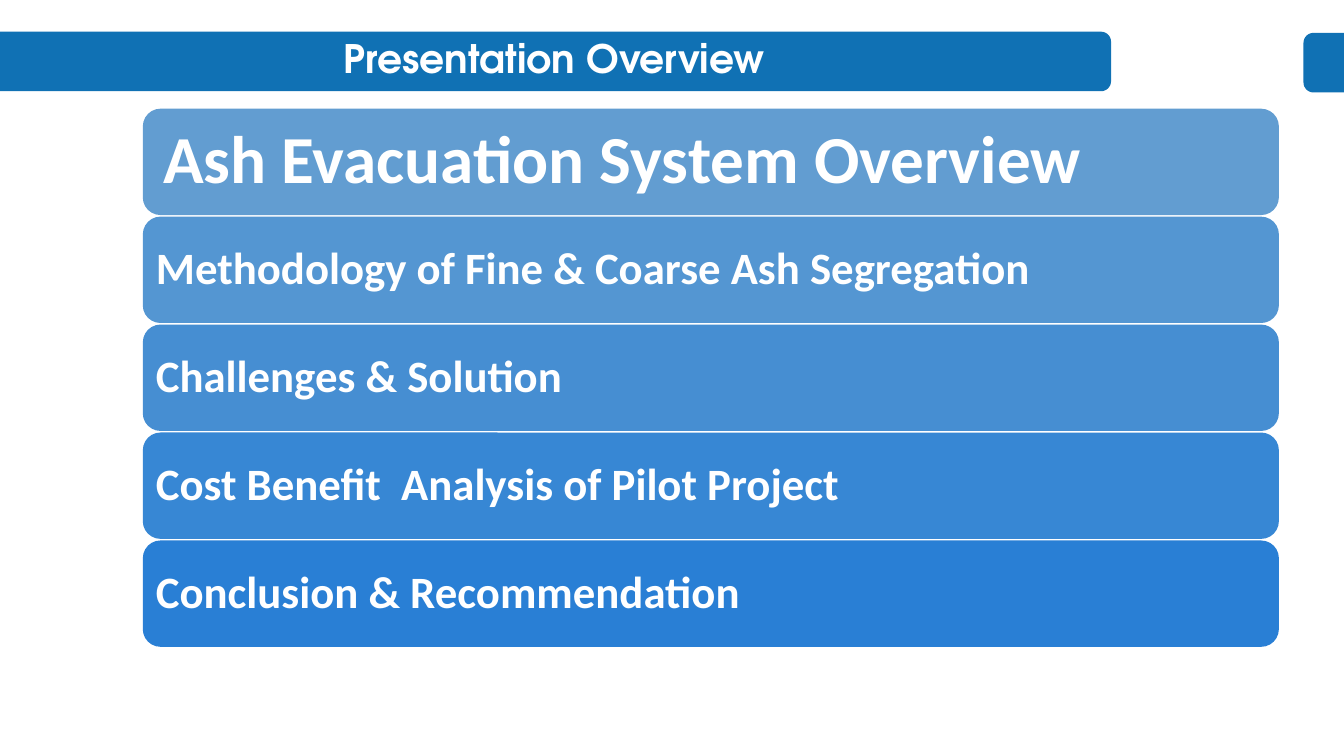
from dataclasses import dataclass
from math import cos, pi, sin

from pptx import Presentation
from pptx import util as u
from pptx.dml.color import RGBColor
from pptx.enum import shapes, text
from pptx.shapes.base import BaseShape
from pptx.slide import Slide
from pptx.text.text import TextFrame


@dataclass(frozen=True)
class Theme:
    band: str = "1071B4"
    ink: str = "FFFFFF"
    title_font: str = "TeX Gyre Adventor"
    body_font: str = "Calibri"
    title_size: int = 28
    lead_size: int = 48
    topic_size: int = 32


@dataclass(frozen=True)
class Band:
    flat_x: float
    round_x: float
    top: float


@dataclass(frozen=True)
class Topic:
    label: str
    fill: str
    size: int = Theme.topic_size
    inset: float = 0.2


THEME = Theme()
SLIDE_W, SLIDE_H = 33.87, 19.05
BAND_H, BAND_RADIUS, ARC_STEPS = 1.5, 0.25, 8
TOPIC_LEFT, TOPIC_TOP, TOPIC_W, TOPIC_H, TOPIC_PITCH = 3.6, 2.74, 28.63, 2.68, 2.72

BANDS = [Band(0, 28, 0.8), Band(SLIDE_W, 32.85, 0.83)]
TOPICS = [
    Topic("Ash Evacuation System Overview", "629DD1", THEME.lead_size, 0.38),
    Topic("Methodology of Fine & Coarse Ash Segregation", "5496D2"),
    Topic("Challenges & Solution", "468ED2"),
    Topic("Cost Benefit  Analysis of Pilot Project", "3787D4"),
    Topic("Conclusion & Recommendation", "297FD5"),
]


def paint(sp: BaseShape, color: str) -> None:
    sp.shadow.inherit = False
    sp.fill.solid()
    sp.fill.fore_color.rgb = RGBColor.from_string(color)
    sp.line.fill.background()


def write(tf: TextFrame, label: str, frame: dict, para: dict, font: dict) -> None:
    p = tf.paragraphs[0]
    r = p.add_run()
    r.text = label
    for target, values in ((tf, frame), (p, para), (r.font, font)):
        for name, value in values.items():
            setattr(target, name, value)
    r.font.color.rgb = RGBColor.from_string(THEME.ink)


def draw_band(s: Slide, band: Band) -> None:
    side = 1 if band.round_x > band.flat_x else -1
    bottom = band.top + BAND_H
    corner_x = band.round_x - side * BAND_RADIUS
    angles = [i * pi / 2 / ARC_STEPS for i in range(ARC_STEPS + 1)]
    upper = [(corner_x + side * BAND_RADIUS * sin(a),
              band.top + BAND_RADIUS * (1 - cos(a))) for a in angles]
    lower = [(x, band.top + bottom - y) for x, y in reversed(upper)]
    points = upper + lower + [(band.flat_x, bottom)]
    builder = s.shapes.build_freeform(u.Cm(band.flat_x), u.Cm(band.top))
    builder.add_line_segments([(u.Cm(x), u.Cm(y)) for x, y in points])
    paint(builder.convert_to_shape(), THEME.band)


def draw_title(s: Slide, label: str) -> None:
    sp = s.shapes.add_textbox(u.Cm(0), u.Cm(0.74), u.Cm(27.94), u.Cm(1.45))
    write(
        sp.text_frame, label,
        {"word_wrap": True, "auto_size": text.MSO_AUTO_SIZE.SHAPE_TO_FIT_TEXT},
        {"alignment": text.PP_ALIGN.CENTER},
        {"name": THEME.title_font, "size": u.Pt(THEME.title_size), "bold": True},
    )


def draw_topic(s: Slide, topic: Topic, row: int) -> None:
    sp = s.shapes.add_shape(
        shapes.MSO_SHAPE.ROUNDED_RECTANGLE, u.Cm(TOPIC_LEFT),
        u.Cm(TOPIC_TOP + row * TOPIC_PITCH), u.Cm(TOPIC_W), u.Cm(TOPIC_H),
    )
    paint(sp, topic.fill)
    sides = ("left", "top", "right", "bottom")
    frame = {f"margin_{side}": u.Cm(topic.inset) for side in sides}
    frame |= {"word_wrap": True, "vertical_anchor": text.MSO_ANCHOR.MIDDLE}
    write(
        sp.text_frame, topic.label, frame,
        {"alignment": text.PP_ALIGN.LEFT, "line_spacing": 0.9},
        {"name": THEME.body_font, "size": u.Pt(topic.size), "bold": True},
    )


def main() -> None:
    prs = Presentation()
    prs.slide_width, prs.slide_height = u.Cm(SLIDE_W), u.Cm(SLIDE_H)
    s = prs.slides.add_slide(prs.slide_layouts[6])
    for band in BANDS:
        draw_band(s, band)
    draw_title(s, "Presentation Overview")
    for row, topic in enumerate(TOPICS):
        draw_topic(s, topic, row)
    prs.save("out.pptx")


if __name__ == "__main__":
    main()
